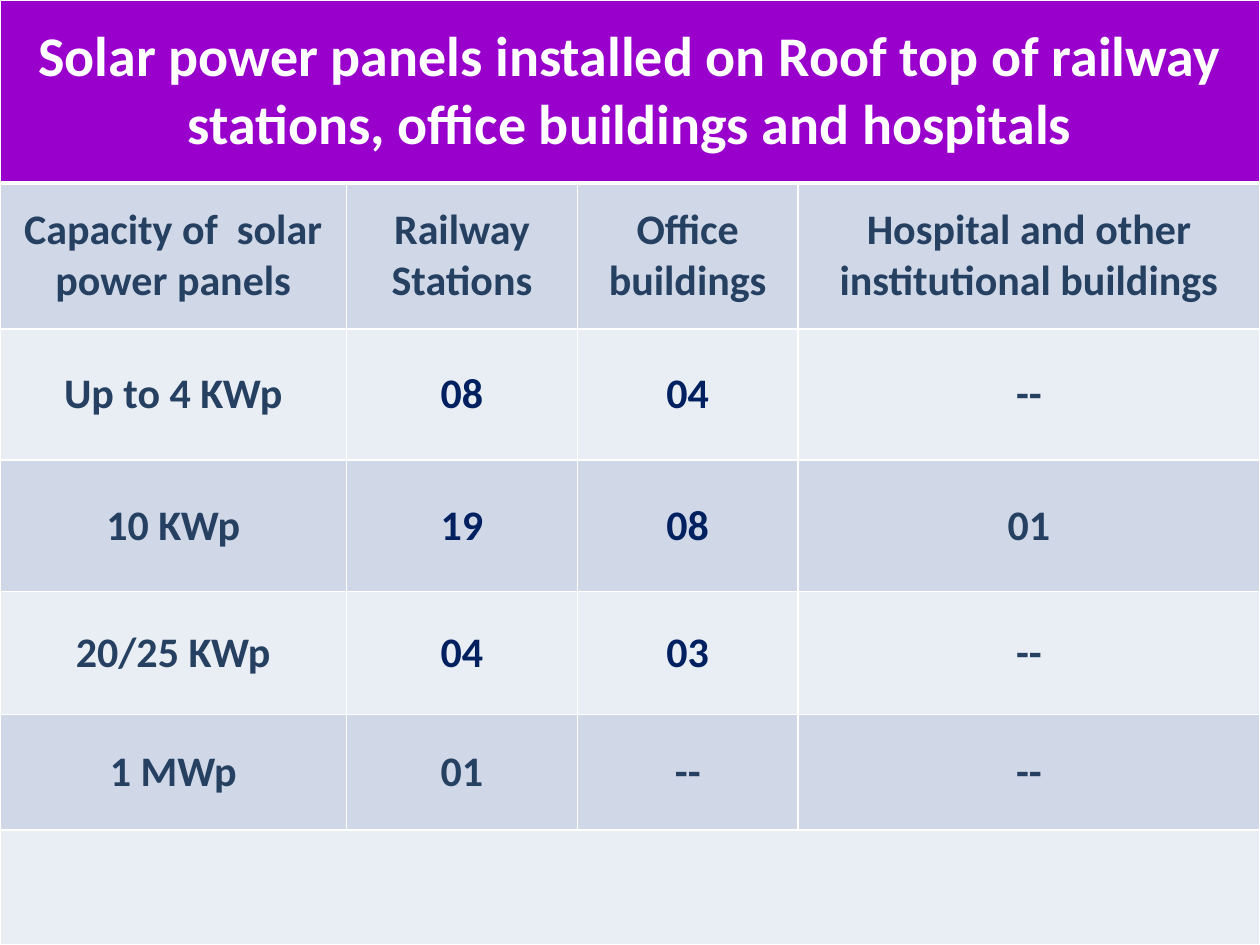
from dataclasses import dataclass

from lxml.etree import SubElement
from pptx import Presentation
from pptx.dml.color import RGBColor
from pptx.enum.text import MSO_ANCHOR, PP_ALIGN
from pptx.oxml.ns import qn
from pptx.table import Table, _Cell
from pptx.util import Pt

COLORS = {
    "white": "FFFFFF",
    "banner": "9900CC",
    "dark_band": "D0D8E8",
    "light_band": "E9EDF4",
    "slate": "254061",
    "navy": "002060",
}
FONT = "Calibri"
SLIDE_WIDTH, SLIDE_HEIGHT = 720, 540
COLUMN_WIDTHS = (198, 132, 126, 264)
THIN, THICK = 1, 3


@dataclass(frozen=True)
class Row:
    height: float
    texts: tuple[str, ...]
    fill: str
    navy_columns: tuple[int, ...] = ()
    color: str = "slate"
    size: int = 24
    top: int = THIN
    bottom: int = THIN


ROWS = (
    Row(104.5, ("Solar power panels installed on Roof top of railway stations, "
                "office buildings and hospitals",),
        "banner", color="white", size=32, bottom=THICK),
    Row(83.5, ("Capacity of  solar power panels", "Railway Stations",
               "Office buildings", "Hospital and other institutional buildings"),
        "dark_band", top=THICK),
    Row(75, ("Up to 4 KWp", "08", "04", "--"), "light_band", navy_columns=(1, 2)),
    Row(75, ("10 KWp", "19", "08", "01"), "dark_band", navy_columns=(1, 2)),
    Row(70.5, ("20/25 KWp", "04", "03", "--"), "light_band", navy_columns=(1, 2)),
    Row(65.75, ("1 MWp", "01", "--", "--"), "dark_band"),
    Row(65.75, ("",), "light_band"),
)


def write_text(cell: _Cell, text: str, *, size: int, color: str) -> None:
    cell.vertical_anchor = MSO_ANCHOR.MIDDLE
    para = cell.text_frame.paragraphs[0]
    para.alignment = PP_ALIGN.CENTER
    span = para.add_run()
    span.text = text
    span.font.name = FONT
    span.font.size = Pt(size)
    span.font.bold = True
    span.font.color.rgb = RGBColor.from_string(COLORS[color])


def set_borders(cell: _Cell, top: int, bottom: int) -> None:
    """Draw white borders; the schema wants them ahead of the cell's fill."""
    properties = cell._tc.get_or_add_tcPr()
    widths = {"a:lnL": THIN, "a:lnR": THIN, "a:lnT": top, "a:lnB": bottom}
    for position, (tag, width) in enumerate(widths.items()):
        line = SubElement(properties, qn(tag), w=str(Pt(width)))
        fill = SubElement(line, qn("a:solidFill"))
        SubElement(fill, qn("a:srgbClr"), val=COLORS["white"])
        properties.insert(position, line)


def fill_row(table: Table, index: int, row: Row) -> None:
    table.rows[index].height = Pt(row.height)
    last = len(COLUMN_WIDTHS) - 1
    if len(row.texts) == 1:
        table.cell(index, 0).merge(table.cell(index, last))
    for column in range(last + 1):
        cell = table.cell(index, column)
        cell.fill.solid()
        cell.fill.fore_color.rgb = RGBColor.from_string(COLORS[row.fill])
        set_borders(cell, row.top, row.bottom)
    for column, text in enumerate(row.texts):
        if text:
            color = "navy" if column in row.navy_columns else row.color
            write_text(table.cell(index, column), text, size=row.size, color=color)


def main() -> None:
    deck = Presentation()
    deck.slide_width, deck.slide_height = Pt(SLIDE_WIDTH), Pt(SLIDE_HEIGHT)
    slide = deck.slides.add_slide(deck.slide_layouts[6])
    table = slide.shapes.add_table(
        len(ROWS), len(COLUMN_WIDTHS), Pt(0), Pt(0), Pt(SLIDE_WIDTH), Pt(SLIDE_HEIGHT)
    ).table
    for column, width in zip(table.columns, COLUMN_WIDTHS):
        column.width = Pt(width)
    for index, row in enumerate(ROWS):
        fill_row(table, index, row)
    deck.save("out.pptx")


if __name__ == "__main__":
    main()
